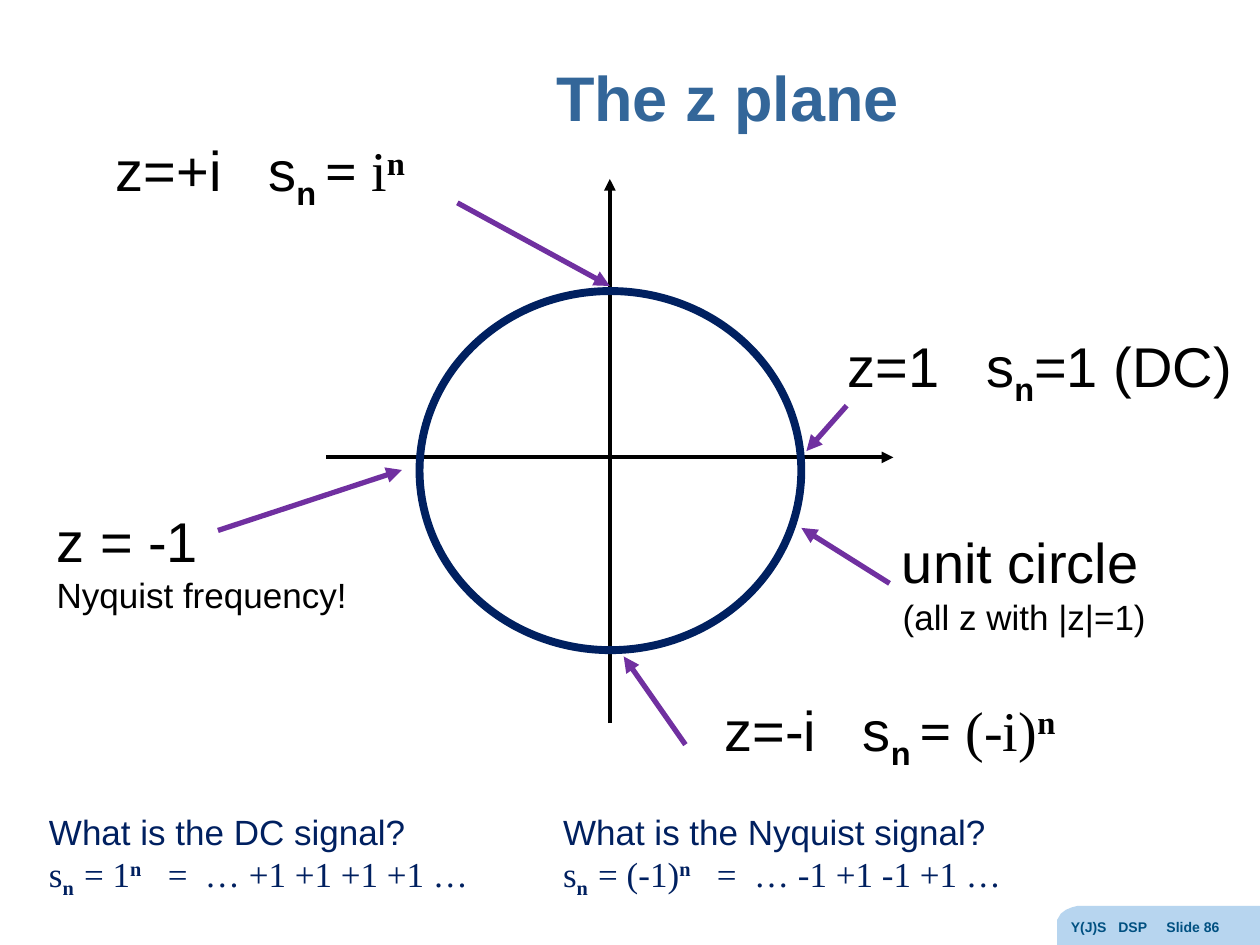
import pptx
import pptx.util
import pptx.dml.color
import pptx.enum.shapes
import pptx.enum.text
import pptx.oxml.ns
import lxml.etree

RGB = pptx.dml.color.RGBColor
ALIGN = pptx.enum.text.PP_ALIGN
ANCHOR = pptx.enum.text.MSO_ANCHOR
BLACK = RGB(0, 0, 0)
NAVY = RGB(0x00, 0x20, 0x60)
PURPLE = RGB(0x70, 0x30, 0xA0)
STEEL = RGB(0x33, 0x66, 0x99)
PALE = RGB(0xB7, 0xD5, 0xEF)
TEAL = RGB(0x00, 0x50, 0x81)
SANS, SERIF = "Arial", "Times New Roman"
PX = 9144

BIG = {"size": 32}
SMALL = {"size": 20}
SUB = {"bold": True, "base": -25}
SUP = {"bold": True, "base": 30}
ROMAN = {"font": SERIF}


def power(sign, base):
    return [[(f"z={sign}i   s", BIG), ("n ", BIG | SUB),
             ("=", BIG | ROMAN | {"bold": True}),
             (f" {base}", BIG | ROMAN), ("n", BIG | ROMAN | SUP)]]


def signal(name, base, terms):
    row = SMALL | ROMAN
    return [[(f"What is the {name} signal?", SMALL)],
            [("s", row), ("n  ", row | SUB), (f"= {base}", row),
             ("n", row | SUP), (f"   =  … {terms} …", row)]]


TITLE = [[("The z plane", {"size": 36, "bold": True})]]
FOOTER = [[("Y(J)S   DSP     Slide 86", {"size": 8, "bold": True})]]
CIRCLE = (333, 231, 303, 285)
TAB = [(1000, 719), (1000, 750), (839, 750), (839, 734), (839, 730),
       (842, 725), (846, 722), (851, 720), (855, 719)]
AXES = [(484, 574, 484, 142), (259, 363, 709, 363)]
ARROWS = [(672, 322, 640, 358), (173, 421, 319, 373),
          (544, 591, 495, 521), (363, 161, 484, 227)]
UNIT = (706, 463, 636, 419)
LABELS = [
    ((663, 258, 355, 64), BLACK,
     [[("z=1   s", BIG), ("n", BIG | SUB), ("=1 (DC)", BIG)]]),
    ((35, 397, 355, 98), BLACK,
     [[("z = -1", BIG)], [("Nyquist frequency!", SMALL)]]),
    ((565, 547, 355, 64), BLACK, power("-", "(-i)")),
    ((82, 103, 355, 64), BLACK, power("+", "i")),
    ((29, 638, 381, 77), NAVY, signal("DC", "1", "+1 +1 +1 +1")),
    ((437, 638, 381, 77), NAVY, signal("Nyquist", "(-1)", "-1 +1 -1 +1")),
]
CIRCLE_TEXT = [[("unit circle", BIG)], [("(all z with |z|=1)", SMALL)]]

deck = pptx.Presentation()
deck.slide_width, deck.slide_height = 1000 * PX, 750 * PX
slide = deck.slides.add_slide(deck.slide_layouts[6])
shapes = slide.shapes


def scale(nums):
    return [num * PX for num in nums]


def write(text, at, color, aligns=(ALIGN.LEFT, ALIGN.LEFT), anchor=ANCHOR.TOP, space=None):
    box = shapes.add_textbox(*scale(at))
    frame = box.text_frame
    frame.word_wrap = True
    frame.vertical_anchor = anchor
    for i, (row, align) in enumerate(zip(text, aligns)):
        para = frame.add_paragraph() if i else frame.paragraphs[0]
        para.alignment = align
        para.line_spacing = space
        for words, style in row:
            run = para.add_run()
            run.text = words
            font = run.font
            font.name = style.get("font", SANS)
            font.size = pptx.util.Pt(style["size"])
            font.bold = style.get("bold", False)
            font.color.rgb = color
            if "base" in style:
                font._element.set("baseline", str(style["base"] * 1000))
    return box


def arrow(ends, color, width):
    line = shapes.add_connector(pptx.enum.shapes.MSO_CONNECTOR.STRAIGHT, *scale(ends))
    line.line.color.rgb = color
    line.line.width = pptx.util.Pt(width)
    tag = pptx.oxml.ns.qn
    lxml.etree.SubElement(line.line._get_or_add_ln(), tag("a:tailEnd"), type="triangle")
    lxml.etree.SubElement(line._element.spPr, tag("a:effectLst"))
    return line


pen = shapes.build_freeform(*TAB[0], scale=PX)
pen.add_line_segments(TAB[1:], close=True)
tab = pen.convert_to_shape()
tab.shadow.inherit = False
tab.fill.solid()
tab.fill.fore_color.rgb = PALE
tab.line.fill.background()

write(TITLE, (212, 18, 731, 125), STEEL, aligns=[ALIGN.CENTER],
      anchor=ANCHOR.MIDDLE, space=0.9)
write(FOOTER, (840, 724, 160, 26), TEAL)

for ends in AXES:
    arrow(ends, BLACK, 2.25)

ring = shapes.add_shape(pptx.enum.shapes.MSO_SHAPE.OVAL, *scale(CIRCLE))
ring.shadow.inherit = False
ring.fill.background()
ring.line.color.rgb = NAVY
ring.line.width = pptx.util.Pt(4.5)

for at, color, text in LABELS:
    write(text, at, color)
for ends in ARROWS:
    arrow(ends, PURPLE, 3)

unit = write(CIRCLE_TEXT, (706, 414, 214, 98), BLACK, aligns=(ALIGN.LEFT, ALIGN.CENTER))
arrow(UNIT, PURPLE, 3).begin_connect(unit, 1)

deck.save("out.pptx")
